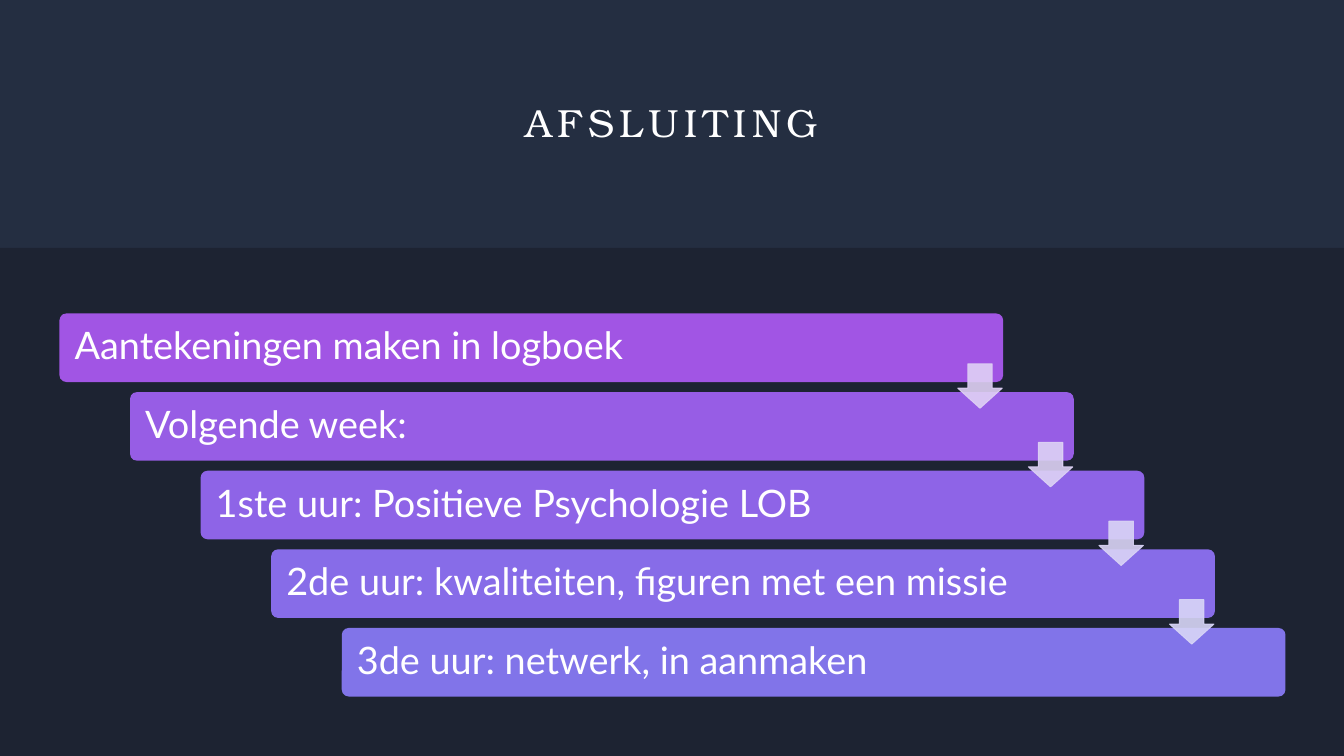
from pptx import Presentation
from pptx.dml.color import RGBColor
from pptx.enum.shapes import MSO_SHAPE
from pptx.enum.text import MSO_ANCHOR, PP_ALIGN
from pptx.oxml.ns import qn
from pptx.util import Inches, Pt
from lxml import etree

ROUNDED, RECTANGLE, DOWN_ARROW = (
    MSO_SHAPE.ROUNDED_RECTANGLE, MSO_SHAPE.RECTANGLE, MSO_SHAPE.DOWN_ARROW)
MIDDLE = MSO_ANCHOR.MIDDLE
LEFT, CENTER = PP_ALIGN.LEFT, PP_ALIGN.CENTER

HEADING = "AFSLUITING"
STEPS = [
    "Aantekeningen maken in logboek",
    "Volgende week:",
    "1ste uur: Positieve Psychologie LOB",
    "2de uur: kwaliteiten, figuren met een missie",
    "3de uur: netwerk, in aanmaken",
]

THEME = {
    "background": "242E41",
    "panel": "1D2332",
    "text": "FFFFFF",
    "bars": ["A155E4", "975DE5", "8E64E7", "876CE8", "8174E9"],
    "arrows": ["E0D1F5", "DDD2F5", "DAD4F6", "D8D6F7"],
    "arrow_opacity": 90,
    "heading_font": "TeX Gyre Bonum",
    "heading_size": 28,
    "heading_spacing": 4,
    "step_font": "Lato",
    "step_size": 27,
}

SLIDE_W, SLIDE_H = 13.33, 7.5
PANEL_TOP = 2.46
BAR_LEFT, BAR_TOP, BAR_W, BAR_H = 0.59, 3.11, 9.36, 0.68
STEP_X, STEP_Y = 0.7, 0.78
ARROW_DX, ARROW_DY, ARROW_SIZE = 8.91, 0.5, 0.44


def add_block(slide, kind, box, color):
    block = slide.shapes.add_shape(kind, *map(Inches, box))
    block.shadow.inherit = False
    block.fill.solid()
    block.fill.fore_color.rgb = RGBColor.from_string(color)
    block.line.fill.background()
    return block


def write(shape, text, font, size, align, left_inset=0):
    frame = shape.text_frame
    frame.word_wrap = True
    frame.vertical_anchor = MIDDLE
    frame.margin_left = Inches(left_inset)
    frame.margin_right = frame.margin_top = frame.margin_bottom = 0
    paragraph = frame.paragraphs[0]
    paragraph.text = text
    paragraph.alignment = align
    paragraph.font.name = font
    paragraph.font.size = Pt(size)
    paragraph.font.color.rgb = RGBColor.from_string(THEME["text"])
    return paragraph


def set_opacity(block, percent):
    for color in block._element.spPr.iter(qn("a:srgbClr")):
        etree.SubElement(color, qn("a:alpha")).set("val", str(percent * 1000))


def add_heading(slide):
    title = slide.shapes.title
    title.left, title.top = Inches(1.18), Inches(0.59)
    title.width, title.height = Inches(10.97), Inches(1.23)
    heading = write(title, HEADING, THEME["heading_font"], THEME["heading_size"], CENTER)
    spacing = str(THEME["heading_spacing"] * 100)
    heading.runs[0]._r.get_or_add_rPr().set("spc", spacing)


def add_step(slide, index, text):
    left, top = BAR_LEFT + index * STEP_X, BAR_TOP + index * STEP_Y
    bar = add_block(slide, ROUNDED, (left, top, BAR_W, BAR_H), THEME["bars"][index])
    bar.adjustments[0] = 0.1
    step = write(bar, text, THEME["step_font"], THEME["step_size"], LEFT, 0.13)
    step.line_spacing = 0.9


def add_arrow(slide, index, color):
    left = BAR_LEFT + index * STEP_X + ARROW_DX
    top = BAR_TOP + index * STEP_Y + ARROW_DY
    arrow = add_block(slide, DOWN_ARROW, (left, top, ARROW_SIZE, ARROW_SIZE), color)
    arrow.adjustments[0], arrow.adjustments[1] = 0.55, 0.45
    arrow.line.color.rgb = RGBColor.from_string(color)
    arrow.line.width = Pt(0.75)
    set_opacity(arrow, THEME["arrow_opacity"])


def main():
    deck = Presentation()
    deck.slide_width, deck.slide_height = Inches(SLIDE_W), Inches(SLIDE_H)
    slide = deck.slides.add_slide(deck.slide_layouts[5])
    slide.background.fill.solid()
    slide.background.fill.fore_color.rgb = RGBColor.from_string(THEME["background"])
    add_heading(slide)
    panel = (0, PANEL_TOP, SLIDE_W, SLIDE_H - PANEL_TOP)
    add_block(slide, RECTANGLE, panel, THEME["panel"])
    for index, text in enumerate(STEPS):
        add_step(slide, index, text)
    for index, color in enumerate(THEME["arrows"]):
        add_arrow(slide, index, color)
    deck.save("out.pptx")


if __name__ == "__main__":
    main()
